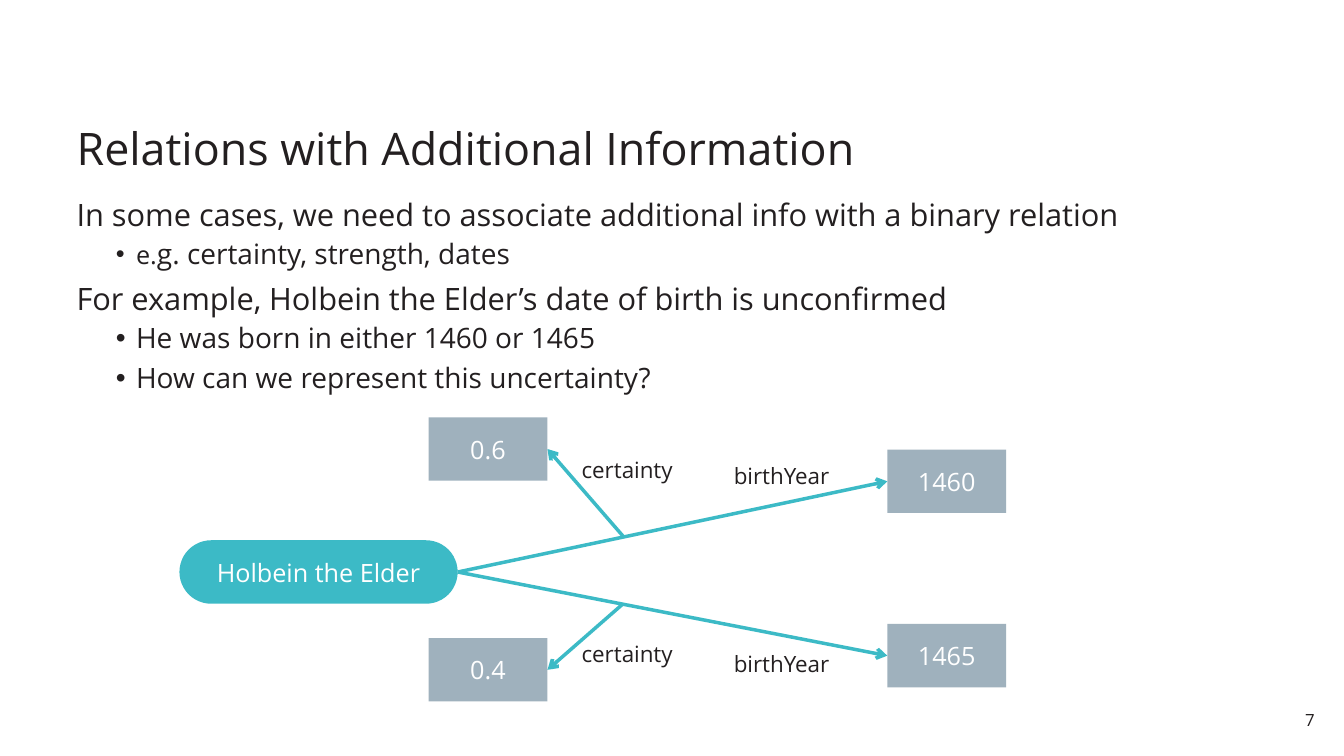
from dataclasses import dataclass

from lxml.etree import SubElement
from pptx import Presentation
from pptx.dml.color import RGBColor
from pptx.enum.shapes import MSO_CONNECTOR, MSO_SHAPE
from pptx.enum.text import MSO_ANCHOR, MSO_AUTO_SIZE, PP_ALIGN
from pptx.oxml.ns import qn
from pptx.util import Inches, Pt

FONT = "Open Sans"
INK, TEAL, GREY, WHITE = "231F20", "3CBAC6", "9FB1BD", "FFFFFF"
TOP, LEFT, BOTTOM, RIGHT = range(4)
VALUE_W, NODE_H = 1.18, 0.63


@dataclass
class Node:
    text: str
    x: float
    y: float
    w: float = VALUE_W
    fill: str = GREY
    kind: MSO_SHAPE = MSO_SHAPE.RECTANGLE


@dataclass
class Label:
    text: str
    x: float
    y: float
    w: float


@dataclass
class Line:
    text: str
    size: int
    before: int
    bullet: bool = False
    lead: str = ""  # smaller opening run


def rgb(value: str) -> RGBColor:
    return RGBColor.from_string(value)


def style(r, size: float, colour: str = INK) -> None:
    r.font.name = FONT
    r.font.size = Pt(size)
    r.font.color.rgb = rgb(colour)


def set_insets(tf, side: float, end: float) -> None:
    tf.margin_left = tf.margin_right = Inches(side)
    tf.margin_top = tf.margin_bottom = Inches(end)


def add_text(slide, x: float, y: float, w: float, h: float):
    return slide.shapes.add_textbox(Inches(x), Inches(y), Inches(w), Inches(h)).text_frame


def add_bullet(p) -> None:
    pPr = p._p.get_or_add_pPr()
    pPr.set("marL", str(Inches(0.59)))
    pPr.set("indent", str(Inches(-0.2)))
    SubElement(pPr, qn("a:buFont"), typeface="Arial")
    SubElement(pPr, qn("a:buChar"), char="•")


def add_node(slide, node: Node):
    sp = slide.shapes.add_shape(node.kind, Inches(node.x), Inches(node.y),
                                Inches(node.w), Inches(NODE_H))
    if node.kind == MSO_SHAPE.ROUNDED_RECTANGLE:
        sp.adjustments[0] = 0.5
    sp.shadow.inherit = False
    sp.fill.solid()
    sp.fill.fore_color.rgb = rgb(node.fill)
    sp.line.fill.background()
    tf = sp.text_frame
    tf.word_wrap = False
    tf.vertical_anchor = MSO_ANCHOR.MIDDLE
    p = tf.paragraphs[0]
    p.text = node.text
    p.alignment = PP_ALIGN.CENTER
    style(p.runs[0], 18, WHITE)
    return sp


def add_label(slide, label: Label) -> None:
    tf = add_text(slide, label.x, label.y, label.w, 0.37)
    tf.word_wrap = False
    tf.auto_size = MSO_AUTO_SIZE.SHAPE_TO_FIT_TEXT
    tf.text = label.text
    style(tf.paragraphs[0].runs[0], 16)


def add_arrow(slide, x: float, y: float, target, side: int):
    line = slide.shapes.add_connector(MSO_CONNECTOR.STRAIGHT, Inches(x), Inches(y),
                                      Inches(x), Inches(y))
    line.end_connect(target, side)
    line.line.color.rgb = rgb(TEAL)
    line.line.width = Pt(2.5)
    SubElement(line.line._get_or_add_ln(), qn("a:tailEnd"), type="arrow")
    SubElement(line._element.spPr, qn("a:effectLst"))
    return line


BODY = [
    Line("In some cases, we need to associate additional info with a binary relation", 22, 0),
    Line("g. certainty, strength, dates", 20, 5, True, "e."),
    Line("For example, Holbein the Elder’s date of birth is unconfirmed", 22, 10),
    Line("He was born in either 1460 or 1465", 20, 5, True),
    Line("How can we represent this uncertainty?", 20, 7, True),
]
PERSON = Node("Holbein the Elder", 1.78, 5.36, 2.76, TEAL, MSO_SHAPE.ROUNDED_RECTANGLE)
YEARS = [Node("1460", 8.8, 4.46), Node("1465", 8.8, 6.19)]
CERTAINTIES = [Node("0.6", 4.25, 4.14), Node("0.4", 4.25, 6.33)]
FORK_X, FORK_YS = 6.18, (5.32, 5.99)
LABELS = [
    Label("birthYear", 7.18, 4.54, 1.2),
    Label("birthYear", 7.18, 6.4, 1.2),
    Label("certainty", 5.67, 4.48, 1.15),
    Label("certainty", 5.67, 6.3, 1.15),
]


def main() -> None:
    prs = Presentation()
    prs.slide_width, prs.slide_height = Inches(13.33), Inches(7.5)
    slide = prs.slides.add_slide(prs.slide_layouts[5])

    # Title
    title = slide.shapes.title
    title.left, title.top = Inches(0.68), Inches(0.76)
    title.width, title.height = Inches(11.97), Inches(1.02)
    tf = title.text_frame
    tf.text = "Relations with Additional Information"
    tf.word_wrap = True
    tf.auto_size = MSO_AUTO_SIZE.NONE
    tf.vertical_anchor = MSO_ANCHOR.BOTTOM
    set_insets(tf, 0.08, 0.04)
    p = tf.paragraphs[0]
    p.alignment = PP_ALIGN.LEFT
    p.line_spacing = 0.9
    style(p.runs[0], 32)

    # Body text
    tf = add_text(slide, 0.68, 1.94, 11.97, 4.88)
    tf.word_wrap = True
    set_insets(tf, 0.08, 0.04)
    for i, line in enumerate(BODY):
        p = tf.add_paragraph() if i else tf.paragraphs[0]
        p.line_spacing = 0.9
        p.space_before = Pt(line.before)
        if line.bullet:
            p.level = 1
            add_bullet(p)
        if line.lead:
            r = p.add_run()
            r.text = line.lead
            style(r, 18)
        r = p.add_run()
        r.text = line.text
        style(r, line.size)

    # Diagram: each year hangs on the person, each certainty on that relation
    person = add_node(slide, PERSON)
    for year, certainty, fork_y in zip(YEARS, CERTAINTIES, FORK_YS):
        relation = add_arrow(slide, FORK_X, fork_y, add_node(slide, year), LEFT)
        relation.begin_connect(person, RIGHT)
        add_arrow(slide, FORK_X, fork_y, add_node(slide, certainty), RIGHT)
    for label in LABELS:
        add_label(slide, label)

    # Slide number
    tf = add_text(slide, 12.65, 6.98, 0.47, 0.31)
    tf.word_wrap = True
    set_insets(tf, 0.08, 0.06)
    p = tf.paragraphs[0]
    p.text = "7"
    p.alignment = PP_ALIGN.RIGHT
    style(p.runs[0], 12)

    prs.save("out.pptx")


if __name__ == "__main__":
    main()
